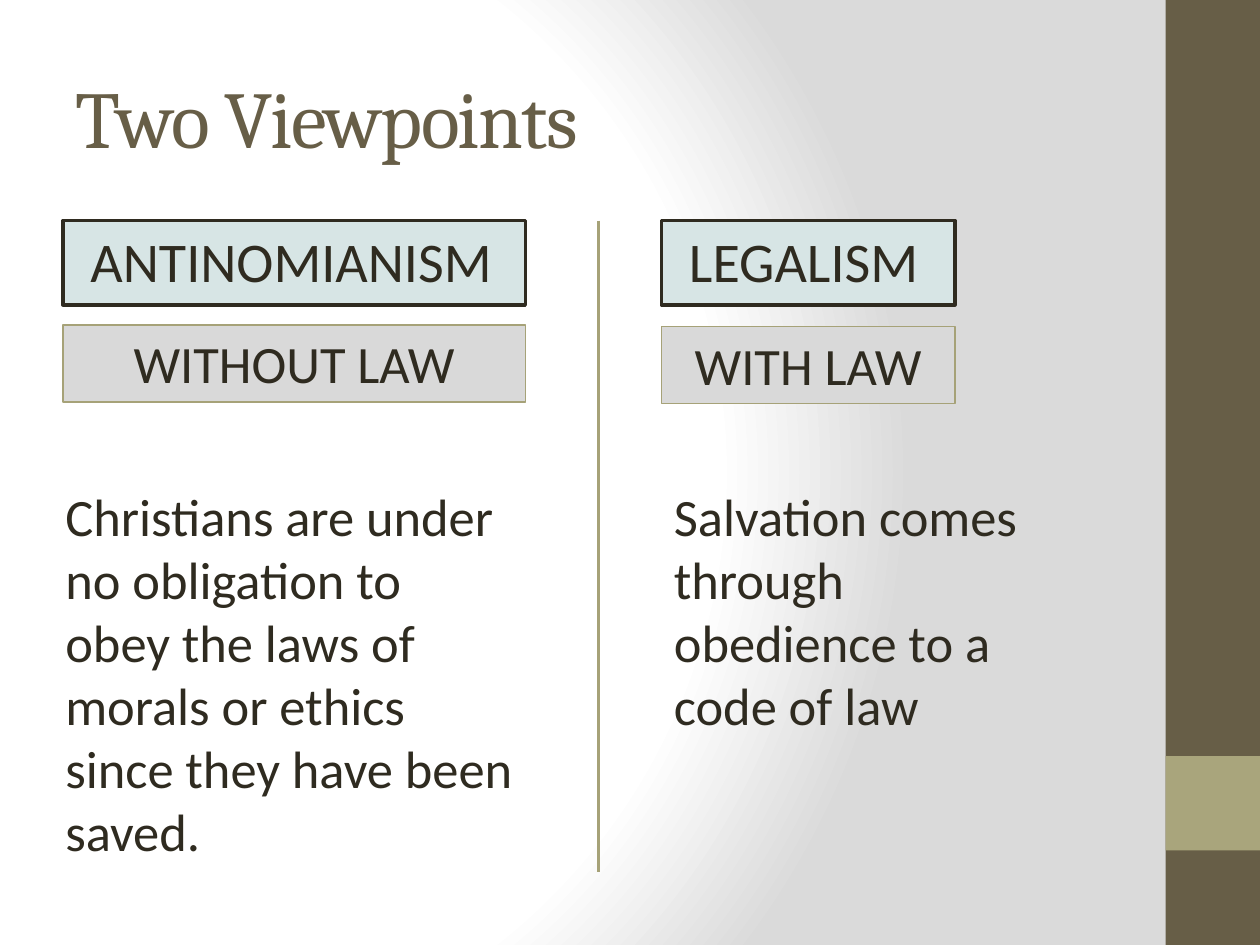
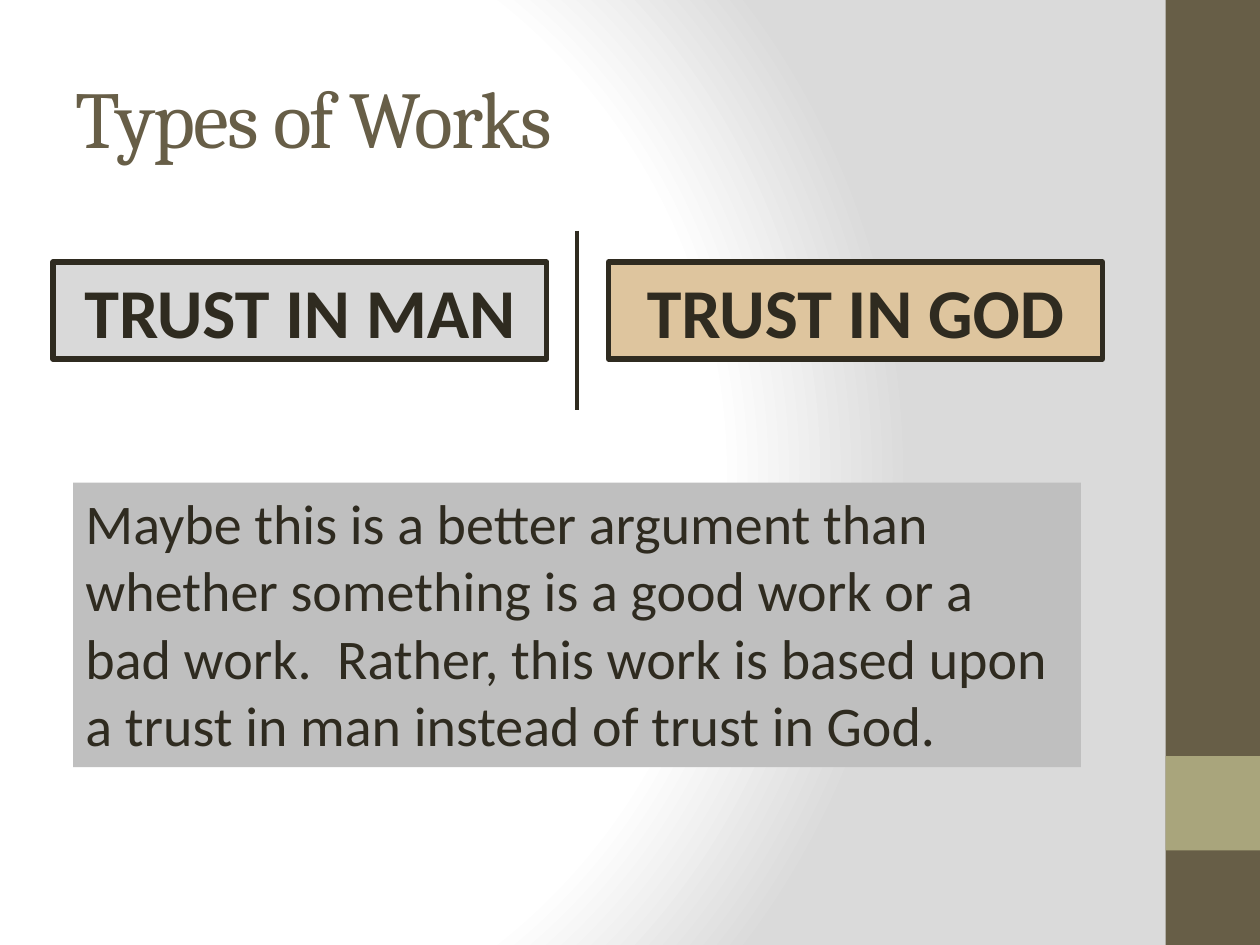
from dataclasses import dataclass
from lxml import etree
from pptx import Presentation
from pptx.dml.color import RGBColor
from pptx.enum.shapes import MSO_CONNECTOR, MSO_SHAPE
from pptx.enum.text import MSO_ANCHOR, PP_ALIGN
from pptx.oxml.ns import qn
from pptx.util import Inches, Pt

RECT = MSO_SHAPE.RECTANGLE
STRAIGHT = MSO_CONNECTOR.STRAIGHT
TOP, MIDDLE = MSO_ANCHOR.TOP, MSO_ANCHOR.MIDDLE
LEFT, CENTER = PP_ALIGN.LEFT, PP_ALIGN.CENTER


@dataclass(frozen=True)
class Theme:
    head_font: str = "Cambria"
    body_font: str = "Calibri"
    ink: str = "2F2B20"
    brown: str = "675E47"
    olive: str = "A9A57C"
    rule: str = "A6A278"
    mint: str = "D7E5E5"
    tan: str = "DEC59E"
    pale: str = "D9D9D9"
    gray: str = "BFBFBF"
    white: str = "FFFFFF"
    edge: str = "DADADA"
    title: int = 46
    big: int = 40
    term: int = 32
    body: int = 30


T = Theme()


def add_box(slide, x, y, w, h, fill=None, line=None, weight=0, text="",
            size=T.body, font=T.body_font, color=T.ink, bold=False,
            align=LEFT, anchor=TOP, indent=0):
    """Add a rectangle, or a text box when there is no fill."""
    spot = [Inches(v) for v in (x, y, w, h)]
    if fill:
        box = slide.shapes.add_shape(RECT, *spot)
        box.shadow.inherit = False
        box.fill.solid()
        box.fill.fore_color.rgb = RGBColor.from_string(fill)
        if line:
            box.line.color.rgb = RGBColor.from_string(line)
            box.line.width = Pt(weight)
        else:
            box.line.fill.background()
    else:
        box = slide.shapes.add_textbox(*spot)
    if not text:
        return None
    frame = box.text_frame
    frame.word_wrap = True
    frame.vertical_anchor = anchor
    par = frame.paragraphs[0]
    par.alignment = align
    if indent:
        par._p.get_or_add_pPr().set("marL", str(Inches(indent)))
    run = par.add_run()
    run.text = text
    run.font.name = font
    run.font.size = Pt(size)
    run.font.bold = bold
    run.font.color.rgb = RGBColor.from_string(color)
    return run


def add_rule(slide, x, top, end, color, weight):
    """Add an upright line without a shadow."""
    rule = slide.shapes.add_connector(
        STRAIGHT, Inches(x), Inches(top), Inches(x), Inches(end))
    rule.line.color.rgb = RGBColor.from_string(color)
    rule.line.width = Pt(weight)
    etree.SubElement(rule._element.spPr, qn("a:effectLst"))


deck = Presentation()
deck.slide_width, deck.slide_height = Inches(10), Inches(7.5)

# Shared background: a round gradient on the master
master = deck.slide_master
master.background.fill.gradient()
grad = next(master.element.iter(qn("a:gradFill")))
for part in list(grad):
    grad.remove(part)
stops = etree.SubElement(grad, qn("a:gsLst"))
for pos, color in ((0, T.white), (75, T.white), (100, T.edge)):
    stop = etree.SubElement(stops, qn("a:gs"), pos=str(pos * 1000))
    etree.SubElement(stop, qn("a:srgbClr"), val=color)
round_path = etree.SubElement(grad, qn("a:path"), {"path": "circle"})
etree.SubElement(round_path, qn("a:fillToRect"),
                 l="20000", t="50000", r="100000", b="50000")

# Both slides: side band, accent square and title
slides = []
for title in ("Two Viewpoints", "Types of Works"):
    slide = deck.slides.add_slide(deck.slide_layouts[6])
    add_box(slide, 9.25, 0, 0.75, 7.5, T.brown)
    add_box(slide, 9.25, 6, 0.75, 0.75, T.olive)
    run = add_box(slide, 0.5, 0.3, 8.33, 1.25, text=title, size=T.title,
                  font=T.head_font, color=T.brown, anchor=MIDDLE)
    run._r.get_or_add_rPr().set("spc", "-100")
    slides.append(slide)
views, works = slides

# Slide 1: two columns of term, meaning and belief
columns = (
    (0.5, 3.67, 2.58, "ANTINOMIANISM", "WITHOUT LAW", 0.42, 3.75, 3.13,
     "Christians are under no obligation to obey the laws of morals "
     "or ethics since they have been saved."),
    (5.25, 2.33, 2.59, "LEGALISM", "WITH LAW", 5.25, 3.17, 2.12,
     "Salvation comes through obedience to a code of law"),
)
for x, w, y, term, sense, left, width, height, belief in columns:
    add_box(views, x, 1.75, w, 0.67, T.mint, T.ink, 2, term, T.term,
            indent=0.12)
    add_box(views, x, y, w, 0.61, T.pale, T.rule, 0.75, sense, align=CENTER)
    add_box(views, left, 3.79, width, height, text=belief)
add_rule(views, 4.75, 1.75, 6.92, T.rule, 2.25)

# Slide 2: two kinds of trust and the argument
for x, fill, trust in ((0.42, T.pale, "TRUST IN MAN"),
                       (4.83, T.tan, "TRUST IN GOD")):
    add_box(works, x, 2.08, 3.92, 0.77, fill, T.ink, 3, trust, T.big,
            bold=True, align=CENTER)
add_rule(works, 4.58, 1.83, 3.25, T.ink, 2.75)
add_box(works, 0.58, 3.83, 8, 2.26, T.gray, size=T.term,
        text="Maybe this is a better argument than whether something is a "
             "good work or a bad work.  Rather, this work is based upon a "
             "trust in man instead of trust in God.")

deck.save("out.pptx")
